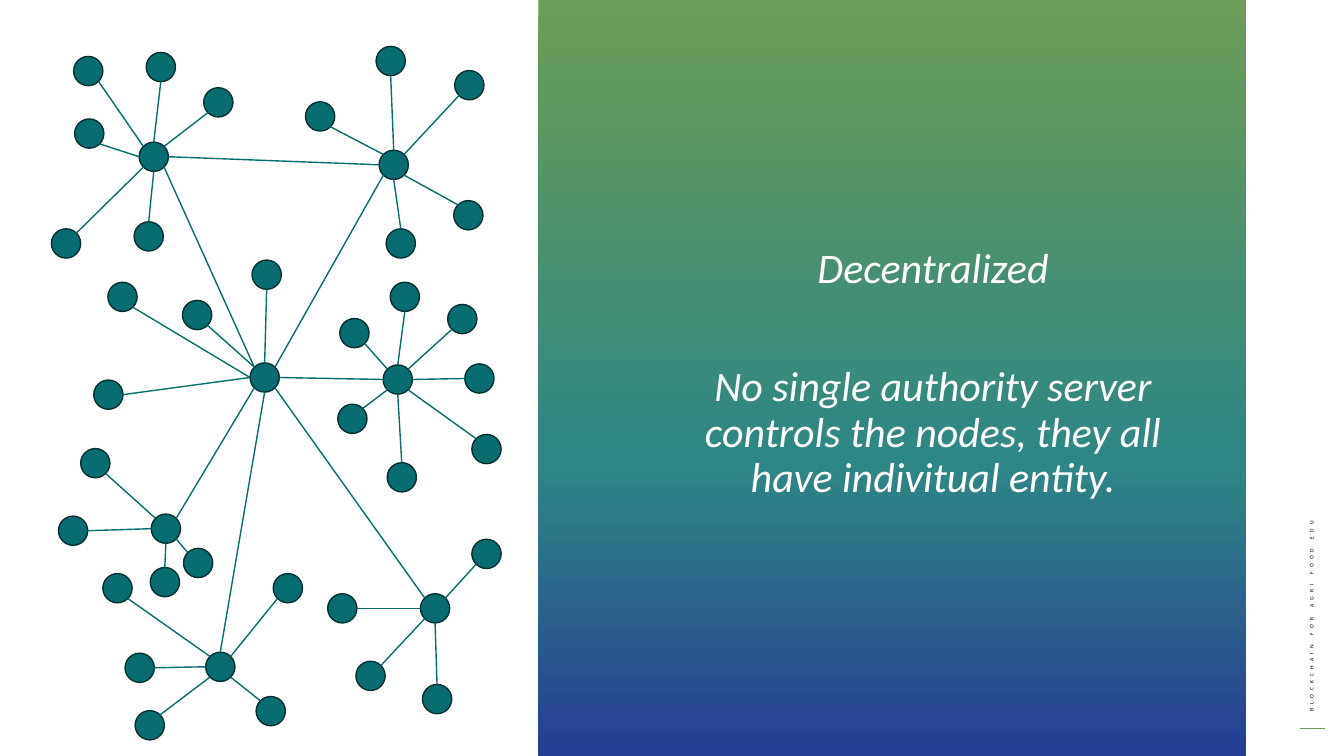
"""Build the slide on decentralized networks."""
from copy import deepcopy
from dataclasses import dataclass
from math import sqrt

from pptx import Presentation
from pptx.dml.color import RGBColor
from pptx.enum import shapes, text
from pptx.oxml import ns, xmlchemy
from pptx.util import Inches, Pt


@dataclass(frozen=True)
class Theme:
    """Colours, font and sizes of the slide."""
    node: RGBColor = RGBColor.from_string("086D6E")
    node_edge: RGBColor = RGBColor.from_string("043030")
    accent: RGBColor = RGBColor.from_string("6A9D56")
    ink: RGBColor = RGBColor.from_string("010101")
    white: RGBColor = RGBColor.from_string("FFFFFF")
    gradient: tuple = ((0, "6A9D56"), (0.61, "2D8784"), (1, "263D94"))
    font: str = "Calibri"
    statement_size: float = 30
    footer_size: float = 4
    line_width: float = 1
    rule_width: float = 0.75


THEME = Theme()
DIAMETER = 0.29
DIAGONAL = sqrt(0.5)
SITES = {
    "N": (0, -1), "S": (0, 1), "W": (-1, 0), "E": (1, 0),
    "NW": (-DIAGONAL, -DIAGONAL), "NE": (DIAGONAL, -DIAGONAL),
    "SW": (-DIAGONAL, DIAGONAL), "SE": (DIAGONAL, DIAGONAL),
}

HUBS = {
    "top left": (1.38, 1.41),
    "top right": (3.76, 1.49),
    "centre": (2.48, 3.6),
    "right": (3.8, 3.62),
    "left": (1.5, 5.1),
    "bottom": (2.04, 6.47),
    "bottom right": (4.17, 5.89),
}
HUB_LINKS = [
    ("top left", "E", "top right", "W"),
    ("centre", "NE", "top right", "SW"),
    ("centre", "NW", "top left", "SE"),
    ("centre", "E", "right", "W"),
    ("centre", "SE", "bottom right", "NW"),
    ("centre", "S", "bottom", "N"),
    ("centre", "SW", "left", "NE"),
]
LEAVES = {
    "top left": [
        (0.73, 0.56, "NW", "SE"), (0.74, 1.18, "W", "SE"), (0.51, 2.27, "SW", "NE"),
        (1.45, 0.52, "N", "S"), (2.02, 0.87, "NE", "SW"), (1.33, 2.2, "S", "N"),
    ],
    "top right": [
        (3.03, 1.01, "NW", "SE"), (4.51, 0.7, "NE", "SW"), (4.5, 1.99, "SE", "NW"),
        (3.73, 0.46, "N", "S"), (3.83, 2.27, "S", "N"),
    ],
    "centre": [
        (2.5, 2.58, "N", "S"), (1.81, 2.98, "NW", "SE"),
        (1.07, 2.8, "W", "SE"), (0.93, 3.77, "W", "E"),
    ],
    "right": [
        (3.37, 3.16, "NW", "SE"), (3.87, 2.8, "N", "S"), (4.44, 3.02, "NE", "SW"),
        (4.61, 3.61, "E", "W"), (3.84, 4.59, "S", "N"), (3.35, 4.01, "SW", "NE"),
        (4.68, 4.31, "SE", "NW"),
    ],
    "left": [
        (0.8, 4.45, "NW", "SE"), (0.58, 5.12, "W", "E"),
        (1.49, 5.63, "S", "N"), (1.82, 5.44, "SE", "NW"),
    ],
    "bottom": [
        (1.02, 5.69, "NW", "SE"), (1.24, 6.48, "W", "E"), (1.34, 7.05, "SW", "NE"),
        (2.54, 6.91, "SE", "NW"), (2.71, 5.69, "NE", "SW"),
    ],
    "bottom right": [
        (4.68, 5.35, "NE", "SW"), (3.25, 5.89, "W", "E"),
        (3.53, 6.56, "SW", "NE"), (4.19, 6.79, "S", "N"),
    ],
}


def apply_format(target, values):
    """Set each named attribute on the target."""
    for name, value in values.items():
        setattr(target, name, value)


def add_line(slide, start, end, color, width):
    """Draw a straight shadowless line between two points."""
    line = slide.shapes.add_connector(
        shapes.MSO_CONNECTOR.STRAIGHT, *map(Inches, (*start, *end)))
    line.line.color.rgb = color
    line.line.width = Pt(width)
    xmlchemy.OxmlElement("a:effectLst")
    line._element.spPr.append(xmlchemy.OxmlElement("a:effectLst"))


def add_text(slide, box, paragraphs, frame_format, font_format):
    """Add a text box from pairs of text and paragraph format."""
    shape = slide.shapes.add_textbox(*map(Inches, box))
    frame = shape.text_frame
    apply_format(frame, frame_format)
    for index, (words, paragraph_format) in enumerate(paragraphs):
        paragraph = frame.add_paragraph() if index else frame.paragraphs[0]
        apply_format(paragraph, paragraph_format)
        run = paragraph.add_run()
        run.text = words
        apply_format(run.font, {"name": THEME.font, **font_format})
        run.font.color.rgb = font_format_color(font_format)
    return shape


def font_format_color(font_format):
    """Choose white for the large statement and ink for small print."""
    return THEME.white if font_format["size"] == Pt(THEME.statement_size) else THEME.ink


def add_node(slide, left, top):
    """Draw one network node."""
    node = slide.shapes.add_shape(
        shapes.MSO_SHAPE.OVAL, *map(Inches, (left, top, DIAMETER, DIAMETER)))
    node.shadow.inherit = False
    node.fill.solid()
    node.fill.fore_color.rgb = THEME.node
    node.line.color.rgb = THEME.node_edge
    node.line.width = Pt(THEME.line_width)


def site_point(left, top, site):
    """Locate a compass site on the rim of a node."""
    radius = DIAMETER / 2
    across, down = SITES[site]
    return left + radius * (1 + across), top + radius * (1 + down)


def add_network(slide, box):
    """Draw the hubs, their leaves and all links inside the box."""
    origin_x, origin_y = box[:2]

    def place(left, top):
        """Shift a node position into the box."""
        return origin_x + left, origin_y + top

    hubs = {name: place(*position) for name, position in HUBS.items()}
    links = [(hubs[first], first_site, hubs[second], second_site)
             for first, first_site, second, second_site in HUB_LINKS]
    links += [(hubs[name], hub_site, place(left, top), leaf_site)
              for name, leaves in LEAVES.items()
              for left, top, hub_site, leaf_site in leaves]
    for node in dict.fromkeys([*hubs.values(), *(link[2] for link in links)]):
        add_node(slide, *node)
    for first, first_site, second, second_site in links:
        add_line(slide, site_point(*first, first_site), site_point(*second, second_site),
                 THEME.node, THEME.line_width)


def add_statement(slide, box):
    """Draw the gradient panel with its centred statement."""
    left, top, width, height = box
    panel = slide.shapes.add_shape(shapes.MSO_SHAPE.RECTANGLE, *map(Inches, box))
    panel.shadow.inherit = False
    panel.line.fill.background()
    panel.fill.gradient()
    panel.fill.gradient_angle = 270
    stop_list = panel._element.spPr.find(".//" + ns.qn("a:gsLst"))
    stop_list.append(deepcopy(stop_list[0]))
    for stop, (position, color) in zip(panel.fill.gradient_stops, THEME.gradient):
        stop.position = position
        stop.color.rgb = RGBColor.from_string(color)
    centred = {"alignment": text.PP_ALIGN.CENTER, "line_spacing": 0.9}
    add_text(
        slide, (left + 1.33, top + 0.65, width - 1.85, height - 1.37),
        [("Decentralized", {**centred, "space_before": Pt(10)}),
         ("No single authority server controls the nodes, they all have indivitual entity.",
          {**centred, "space_before": Pt(52)})],
        {"word_wrap": True, "vertical_anchor": text.MSO_ANCHOR.MIDDLE},
        {"size": Pt(THEME.statement_size), "italic": True})


def add_footer(slide, box):
    """Draw the sideways footer and the short rule below it."""
    left, top, width, height = box
    length, depth = 2.94, 0.17
    label = add_text(
        slide, (left + 0.12 - length / 2, top + height - 1.81 - depth / 2, length, depth),
        [("BLOCKCHAIN FOR AGRI FOOD EDU", {"alignment": text.PP_ALIGN.LEFT})],
        {"word_wrap": True}, {"size": Pt(THEME.footer_size)})
    label.rotation = 270
    label.text_frame.paragraphs[0].runs[0].font._element.set("spc", "300")
    rule_y = top + height - 0.27
    add_line(slide, (left, rule_y), (left + width, rule_y), THEME.accent, THEME.rule_width)


def main():
    """Build and save the presentation."""
    presentation = Presentation()
    apply_format(presentation, {"slide_width": Inches(13.33), "slide_height": Inches(7.5)})
    slide = presentation.slides.add_slide(presentation.slide_layouts[6])
    add_footer(slide, (12.89, 0, 0.25, 7.5))
    add_statement(slide, (5.34, 0, 7.02, 7.5))
    add_network(slide, (0, 0, 5.34, 7.5))
    presentation.save("out.pptx")


if __name__ == "__main__":
    main()
